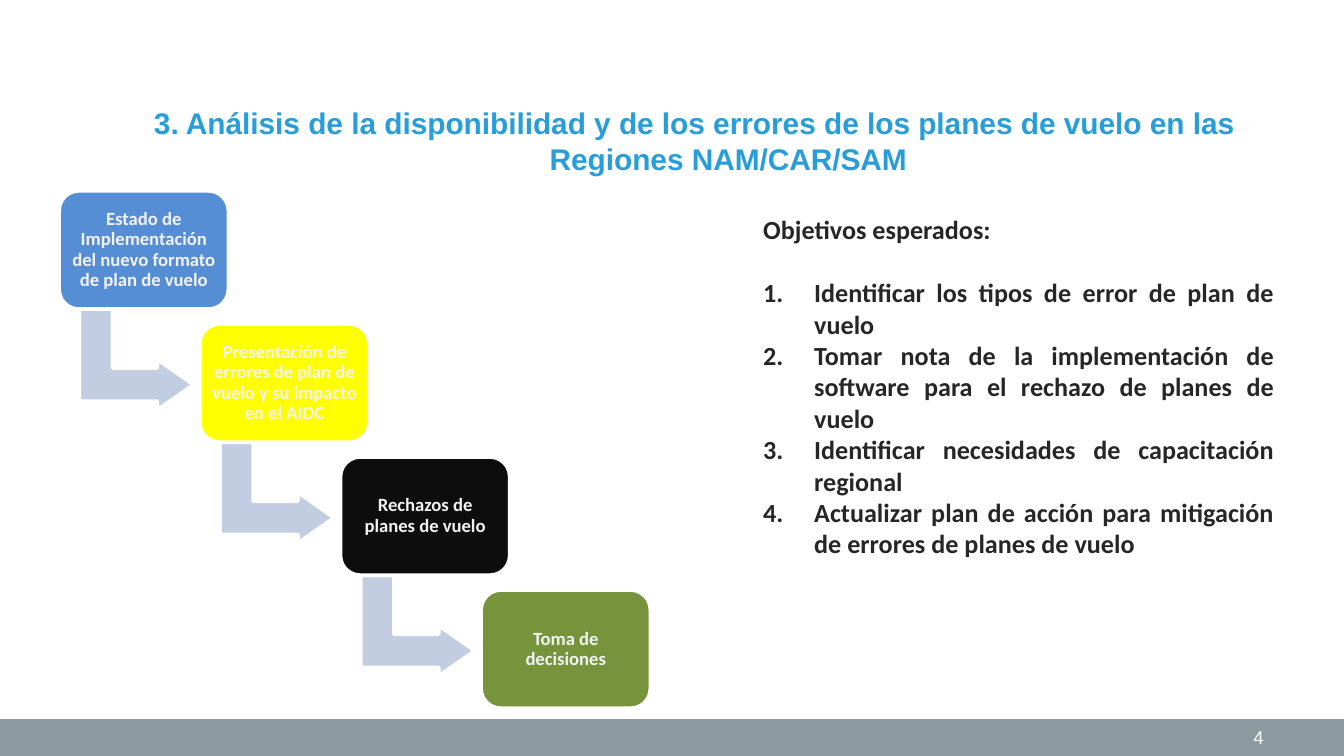
from lxml.etree import SubElement
from pptx import Presentation
from pptx.dml.color import RGBColor
from pptx.enum.shapes import MSO_SHAPE
from pptx.enum.text import MSO_ANCHOR, PP_ALIGN
from pptx.oxml.ns import qn
from pptx.util import Inches, Pt

THEME = {
    "title": RGBColor.from_string("279DD9"),
    "body": RGBColor.from_string("262626"),
    "step": RGBColor.from_string("F2F2F2"),
    "arrow": RGBColor.from_string("C2CDE1"),
    "footer": RGBColor.from_string("8C99A1"),
    "white": RGBColor.from_string("FFFFFF"),
    "title_size": Pt(16),
    "body_size": Pt(14),
    "small_size": Pt(10),
}
STEPS = [
    ("Estado de Implementación del nuevo formato de plan de vuelo", "558ED5"),
    ("Presentación de errores de plan de vuelo y su impacto en el AIDC", "FFFF00"),
    ("Rechazos de planes de vuelo", "0D0D0D"),
    ("Toma de decisiones", "77933C"),
]
GOALS = [
    "Identificar los tipos de error de plan de vuelo",
    "Tomar nota de la implementación de software para el rechazo de planes de vuelo",
    "Identificar necesidades de capacitación regional",
    "Actualizar plan de acción para mitigación de errores de planes de vuelo",
]


def add_run(p, text, font, size, color, bold=True):
    r = p.add_run()
    r.text = text
    r.font.name = font
    r.font.size = size
    r.font.bold = bold
    r.font.color.rgb = color


def add_filled(s, kind, left, top, width, height, fill):
    sp = s.shapes.add_shape(kind, Inches(left), Inches(top), Inches(width), Inches(height))
    sp.shadow.inherit = False
    sp.fill.solid()
    sp.fill.fore_color.rgb = fill
    sp.line.color.rgb = THEME["white"]
    sp.line.width = Pt(2)
    return sp


prs = Presentation()
prs.slide_width = Inches(10)
prs.slide_height = Inches(10) * 9 // 16
s = prs.slides.add_slide(prs.slide_layouts[5])

footer = add_filled(s, MSO_SHAPE.RECTANGLE, 0, 5.35, 10, 0.28, THEME["footer"])
footer.height = prs.slide_height - footer.top
footer.line.fill.background()

title = s.shapes.title
title.left, title.top = Inches(0.67), Inches(0.73)
title.width, title.height = Inches(9), Inches(0.94)
tf = title.text_frame
tf.word_wrap = True
tf.vertical_anchor = MSO_ANCHOR.TOP
p = tf.paragraphs[0]
p.alignment = PP_ALIGN.CENTER
add_run(p, "3. Análisis de la disponibilidad y de los errores de los planes de vuelo en las",
        "Arial", THEME["title_size"], THEME["title"])
p.add_line_break()
add_run(p, "\tRegiones NAM/CAR/SAM", "Arial", THEME["title_size"], THEME["title"])

number = s.shapes.add_textbox(Inches(7.17), Inches(5.35), Inches(2.33), Inches(0.27))
tf = number.text_frame
tf.word_wrap = True
tf.vertical_anchor = MSO_ANCHOR.MIDDLE
p = tf.paragraphs[0]
p.alignment = PP_ALIGN.RIGHT
add_run(p, "4", "Arial", THEME["small_size"], THEME["white"], bold=False)

for i, (text, fill) in enumerate(STEPS):
    left, top = 0.44 + 3.14 * i / 3, 1.42 + 0.99 * i
    if i < len(STEPS) - 1:
        arrow = add_filled(s, MSO_SHAPE.BENT_UP_ARROW, left + 0.2, top + 0.83, 0.75, 0.85, THEME["arrow"])
        arrow.rotation = 90
        for j, value in enumerate((0.33, 0.25, 0.36)):
            arrow.adjustments[j] = value
    step = add_filled(s, MSO_SHAPE.ROUNDED_RECTANGLE, left, top, 1.26, 0.88, RGBColor.from_string(fill))
    tf = step.text_frame
    tf.word_wrap = True
    tf.vertical_anchor = MSO_ANCHOR.MIDDLE
    tf.margin_left = tf.margin_right = tf.margin_top = tf.margin_bottom = Inches(0.04)
    p = tf.paragraphs[0]
    p.alignment = PP_ALIGN.CENTER
    p.line_spacing = 0.9
    add_run(p, text, "Calibri", THEME["small_size"], THEME["step"])

goals = s.shapes.add_textbox(Inches(5.58), Inches(1.56), Inches(4), Inches(3.16))
tf = goals.text_frame
tf.word_wrap = True
tf.margin_top = Inches(0.03)
p = tf.paragraphs[0]
p.alignment = PP_ALIGN.JUSTIFY
p.space_after = Pt(17)
add_run(p, "Objetivos esperados:", "Calibri", THEME["body_size"], THEME["body"])
for goal in GOALS:
    p = tf.add_paragraph()
    p.alignment = PP_ALIGN.JUSTIFY
    pPr = p._p.get_or_add_pPr()
    pPr.set("marL", str(Inches(0.38)))
    pPr.set("indent", str(-Inches(0.38)))
    SubElement(pPr, qn("a:buFont"), typeface="+mj-lt")
    SubElement(pPr, qn("a:buAutoNum"), type="arabicPeriod")
    add_run(p, goal, "Calibri", THEME["body_size"], THEME["body"])

prs.save("out.pptx")
